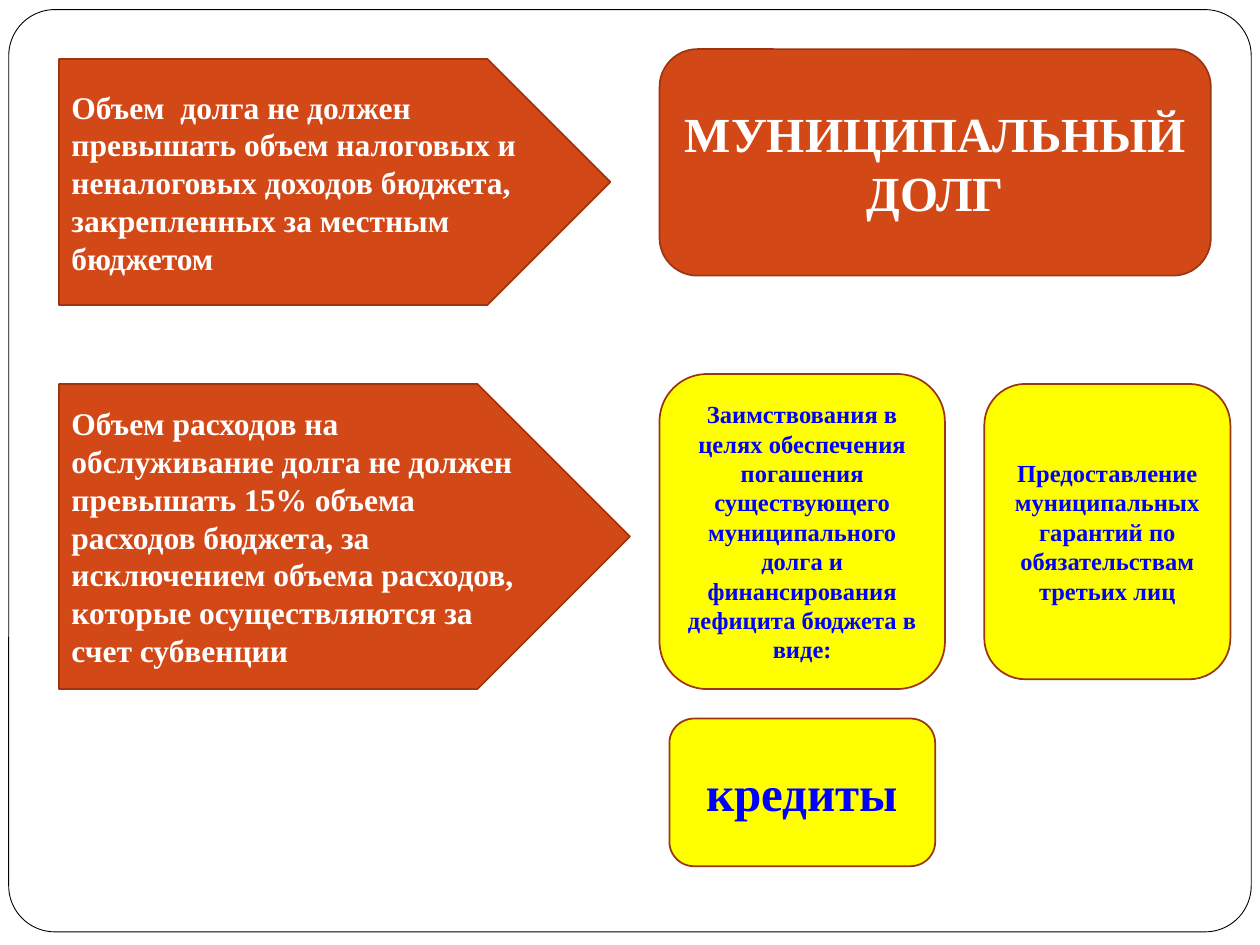
import pptx
import pptx.util
from pptx.dml.color import RGBColor
from pptx.enum.shapes import MSO_SHAPE
from pptx.enum.text import MSO_ANCHOR, PP_ALIGN

Pt = pptx.util.Pt

FONT = "Times New Roman"
ORANGE, YELLOW, BROWN = "D34817", "FFFF00", "9C3511"
WHITE, BLUE, BLACK = "FFFFFF", "0000FF", "000000"
ROUND, ARROW = MSO_SHAPE.ROUNDED_RECTANGLE, MSO_SHAPE.PENTAGON
CENTER, LEFT = PP_ALIGN.CENTER, PP_ALIGN.LEFT

STYLES = {
    "title": (ROUND, ORANGE, WHITE, 28, CENTER),
    "limit": (ARROW, ORANGE, WHITE, 18, LEFT),
    "purpose": (ROUND, YELLOW, BLUE, 14, CENTER),
    "form": (ROUND, YELLOW, BLUE, 28, CENTER),
}

BLOCKS = [
    ("title", (376.9, 28.1, 315, 129.4), "МУНИЦИПАЛЬНЫЙ ДОЛГ"),
    ("limit", (33.75, 33.75, 315, 140.6),
     "Объем  долга не должен превышать объем налоговых и неналоговых "
     "доходов бюджета, закрепленных за местным бюджетом"),
    ("limit", (33.75, 219.4, 326.25, 174.4),
     "Объем расходов на обслуживание долга не должен превышать 15% объема "
     "расходов бюджета, за исключением объема расходов, которые "
     "осуществляются за счет субвенции"),
    ("purpose", (376.9, 213.75, 163.1, 180),
     "Заимствования в целях обеспечения погашения существующего "
     "муниципального долга и финансирования дефицита бюджета в виде:"),
    ("purpose", (562.5, 219.4, 140.6, 168.75),
     "Предоставление муниципальных гарантий по обязательствам третьих лиц"),
    ("form", (382.5, 410.6, 151.9, 84.4), "кредиты"),
]


def color(value):
    return RGBColor.from_string(value)


def add_block(page, kind, place, fill, line, width):
    box = page.shapes.add_shape(kind, *map(Pt, place))
    box.shadow.inherit = False
    box.fill.solid()
    box.fill.fore_color.rgb = color(fill)
    box.line.color.rgb = color(line)
    box.line.width = Pt(width)
    return box


def write(box, text, ink, size, align):
    frame = box.text_frame
    frame.word_wrap = True
    frame.vertical_anchor = MSO_ANCHOR.MIDDLE
    para = frame.paragraphs[0]
    para.text = text
    para.alignment = align
    para.font.name = FONT
    para.font.size = Pt(size)
    para.font.bold = True
    para.font.color.rgb = color(ink)


def main():
    deck = pptx.Presentation()
    deck.slide_width, deck.slide_height = Pt(720), Pt(540)
    page = deck.slides.add_slide(deck.slide_layouts[6])

    border = add_block(page, ROUND, (5, 5.5, 710, 527), WHITE, BLACK, 0.5)
    border.adjustments[0] = 0.05

    for style, place, text in BLOCKS:
        kind, fill, ink, size, align = STYLES[style]
        box = add_block(page, kind, place, fill, BROWN, 1)
        write(box, text, ink, size, align)

    deck.save("out.pptx")


if __name__ == "__main__":
    main()
